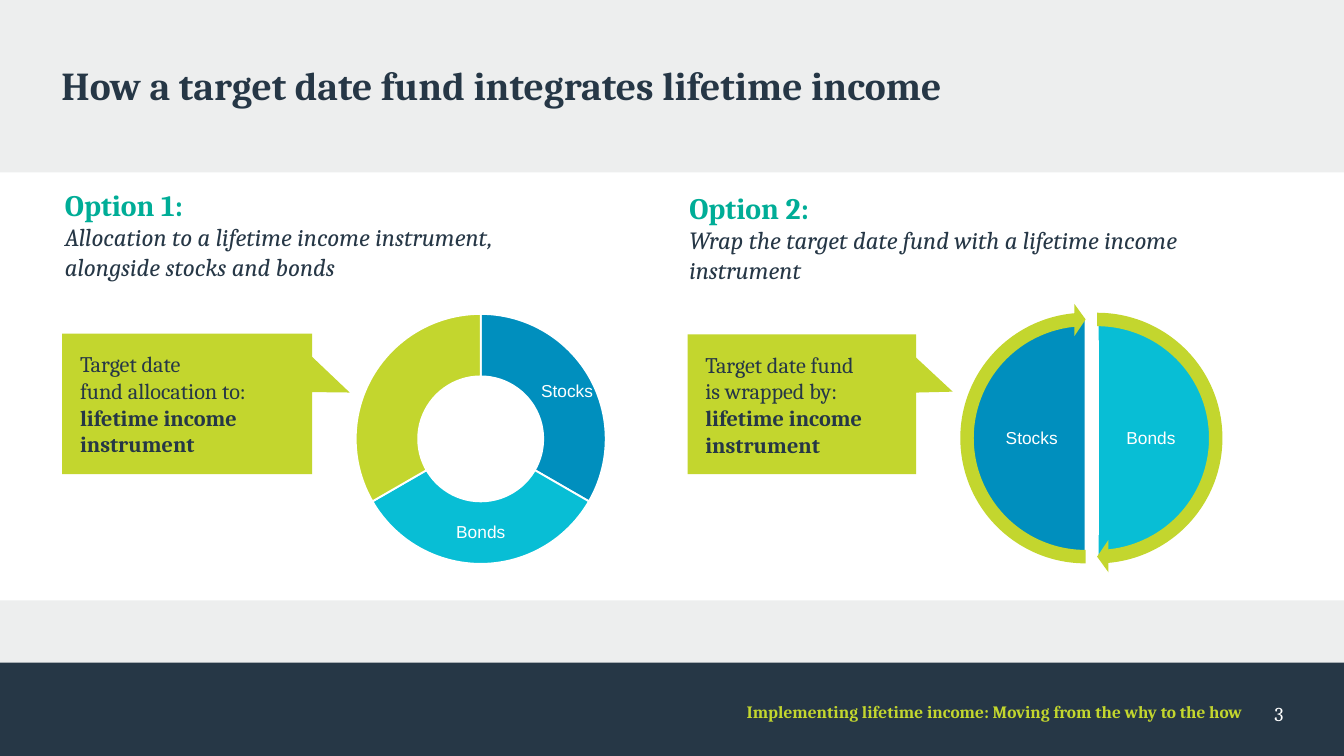
from dataclasses import dataclass

from lxml import etree
from pptx import Presentation
from pptx.chart.data import CategoryChartData
from pptx.dml.color import RGBColor
from pptx.enum.chart import XL_CHART_TYPE
from pptx.enum.shapes import MSO_SHAPE
from pptx.enum.text import MSO_ANCHOR, PP_ALIGN
from pptx.oxml.ns import qn
from pptx.util import Inches, Pt

DOUGHNUT = XL_CHART_TYPE.DOUGHNUT
RECTANGLE = MSO_SHAPE.RECTANGLE
PIE = MSO_SHAPE.PIE
ARC_ARROW = MSO_SHAPE.CIRCULAR_ARROW
CALLOUT = MSO_SHAPE.RECTANGULAR_CALLOUT
TOP, MIDDLE = MSO_ANCHOR.TOP, MSO_ANCHOR.MIDDLE
LEFT, CENTER, RIGHT = PP_ALIGN.LEFT, PP_ALIGN.CENTER, PP_ALIGN.RIGHT

WIDTH, HEIGHT = Inches(15.11), Inches(8.5)


@dataclass(frozen=True)
class Theme:
    serif: str = "Cambria"
    sans: str = "Arial"
    backdrop: str = "EDEEEE"
    navy: str = "263746"
    lime: str = "C3D62E"
    teal: str = "00AD97"
    blue: str = "008FBE"
    cyan: str = "08BED5"
    white: str = "FFFFFF"
    title: int = 32
    heading: int = 24
    subheading: int = 20
    callout: int = 18
    page: int = 16
    small: int = 14


THEME = Theme()


def style(size, color, name=THEME.serif, bold=False, italic=False):
    return {"size": Pt(size), "color": color, "name": name, "bold": bold, "italic": italic}


TITLE = style(THEME.title, THEME.navy, bold=True)
HEADING = style(THEME.heading, THEME.teal, bold=True)
SUBHEADING = style(THEME.subheading, THEME.navy, italic=True)
CALLOUT_TEXT = style(THEME.callout, THEME.navy)
CALLOUT_BOLD = style(THEME.callout, THEME.navy, bold=True)
LABEL = style(THEME.small, THEME.white, THEME.sans)
FOOTER = style(THEME.small, THEME.lime, bold=True)
PAGE = style(THEME.page, THEME.white)


def place(left, top, width, height):
    """Turn percentages of the slide's size into lengths."""
    return (int(WIDTH * left / 100), int(HEIGHT * top / 100),
            int(WIDTH * width / 100), int(HEIGHT * height / 100))


def paint(fill, color):
    fill.solid()
    fill.fore_color.rgb = RGBColor.from_string(color)


def format_font(font, values):
    for key, value in values.items():
        if key == "color":
            font.color.rgb = RGBColor.from_string(value)
        else:
            setattr(font, key, value)


def write(frame, paragraphs, align=LEFT, anchor=TOP, insets=(0, 0, 0, 0)):
    """Fill a frame; each paragraph is a list of (text, style) and may hold line breaks."""
    frame.word_wrap = True
    frame.vertical_anchor = anchor
    for side, inset in zip(("left", "top", "right", "bottom"), insets):
        setattr(frame, f"margin_{side}", Inches(inset))
    for index, spans in enumerate(paragraphs):
        para = frame.add_paragraph() if index else frame.paragraphs[0]
        para.alignment = align
        for text, values in spans:
            for number, line in enumerate(text.split("\n")):
                if number:
                    para.add_line_break()
                if line:
                    span = para.add_run()
                    span.text = line
                    format_font(span.font, values)


def add_text(page, area, paragraphs, **layout):
    box = page.shapes.add_textbox(*place(*area))
    write(box.text_frame, paragraphs, **layout)


def add_label(page, area, text):
    add_text(page, area, [[(text, LABEL)]], align=CENTER, anchor=MIDDLE)


def add_block(page, kind, area, color, adjustments=(), outline=None):
    block = page.shapes.add_shape(kind, *place(*area))
    block.shadow.inherit = False
    paint(block.fill, color)
    if outline:
        paint(block.line.fill, outline)
        block.line.width = Pt(2)
    else:
        block.line.fill.background()
    for index, value in enumerate(adjustments):
        block.adjustments[index] = value
    return block


def add_option(page, area, heading, summary, anchor):
    add_text(page, area, [[(heading, HEADING)], [(summary, SUBHEADING)]],
             anchor=anchor, insets=(0.03,) * 4)


def add_callout(page, area, tip, lead):
    callout = add_block(page, CALLOUT, area, THEME.lime, tip)
    spans = [(lead + "\n", CALLOUT_TEXT), ("lifetime income instrument", CALLOUT_BOLD)]
    write(callout.text_frame, [spans], anchor=MIDDLE, insets=(0.2, 0.1, 0.1, 0.1))


def add_allocation_chart(page, area):
    data = CategoryChartData()
    data.categories = ["1", "2", "3"]
    data.add_series("Series 1", (33, 33, 33))
    chart = page.shapes.add_chart(DOUGHNUT, *place(*area), data).chart
    chart.has_legend = chart.has_title = False
    format_font(chart.font, style(10, "000000"))
    plot = chart.plots[0]
    plot.vary_by_categories = False
    for index, color in enumerate((THEME.blue, THEME.cyan, THEME.lime)):
        point = plot.series[0].points[index].format
        paint(point.fill, color)
        paint(point.line.fill, THEME.white)
        point.line.width = Pt(1.5)
    plot_area = chart.element.find(".//" + qn("c:plotArea"))
    plot_area.find(".//" + qn("c:holeSize")).set("val", "54")
    for layout in plot_area.findall(qn("c:layout")):
        plot_area.remove(layout)
    layout = etree.Element(qn("c:layout"))
    manual = etree.SubElement(layout, qn("c:manualLayout"))
    settings = {"layoutTarget": "inner", "xMode": "edge", "yMode": "edge",
                "x": 0.07, "y": 0.05, "w": 0.86, "h": 0.91}
    for tag, value in settings.items():
        etree.SubElement(manual, qn(f"c:{tag}")).set("val", str(value))
    plot_area.insert(0, layout)


def add_wrapped_fund(page):
    """Draw two half pies, each wrapped by a curved arrow."""
    right, left = (162, 54), (54, 162)
    halves = ((72.73, right, THEME.cyan, 82.46, "Bonds"),
              (71.87, left, THEME.blue, 73.59, "Stocks"))
    for pie_left, angles, color, label_left, text in halves:
        add_block(page, PIE, (pie_left, 42, 17.87, 31.76), color, angles, THEME.white)
        add_label(page, (label_left, 50.35, 6.35, 15.06), text)
    for arrow_left, tip, start in ((71.61, 50.73, 162), (70.75, 158.73, 54)):
        add_block(page, ARC_ARROW, (arrow_left, 40.12, 20.05, 35.65), THEME.lime,
                  (0.05, 3.28, tip, start, 0.06))


def main():
    deck = Presentation()
    deck.slide_width, deck.slide_height = WIDTH, HEIGHT
    page = deck.slides.add_slide(deck.slide_layouts[5])
    paint(page.background.fill, THEME.backdrop)

    title = page.shapes.title
    title.left, title.top, title.width, title.height = place(4.57, 8.12, 90.93, 13.29)
    write(title.text_frame, [[("How a target date fund integrates lifetime income", TITLE)]])

    add_block(page, RECTANGLE, (0, 87.65, 100, 12.35), THEME.navy)
    add_text(page, (92.85, 92.82, 2.65, 3.88), [[("3", PAGE)]], align=RIGHT)
    add_text(page, (37.33, 92.82, 55.13, 3.41),
             [[("Implementing lifetime income: Moving from the why to the how", FOOTER)]],
             align=RIGHT)
    add_block(page, RECTANGLE, (0, 22.82, 100, 56.59), THEME.white)

    add_option(page, (4.63, 24.24, 38.25, 13.41), "Option 1:",
               "Allocation to a lifetime income instrument, alongside stocks and bonds", MIDDLE)
    add_callout(page, (4.63, 44.12, 18.6, 18.59), (0.65, -0.08),
                "Target date\nfund allocation to:")
    add_allocation_chart(page, (24.95, 39.65, 21.64, 36.47))
    add_label(page, (31.9, 66.94, 7.74, 6.82), "Bonds")
    add_label(page, (38.32, 48.24, 7.74, 6.82), "Stocks")

    add_option(page, (51.09, 24.71, 39.71, 13.41), "Option 2:",
               "Wrap the target date fund with a lifetime income instrument", TOP)
    add_callout(page, (51.16, 44.24, 17.01, 18.47), (0.66, -0.09),
                "Target date fund\nis wrapped by:")
    add_wrapped_fund(page)

    deck.save("out.pptx")


if __name__ == "__main__":
    main()
